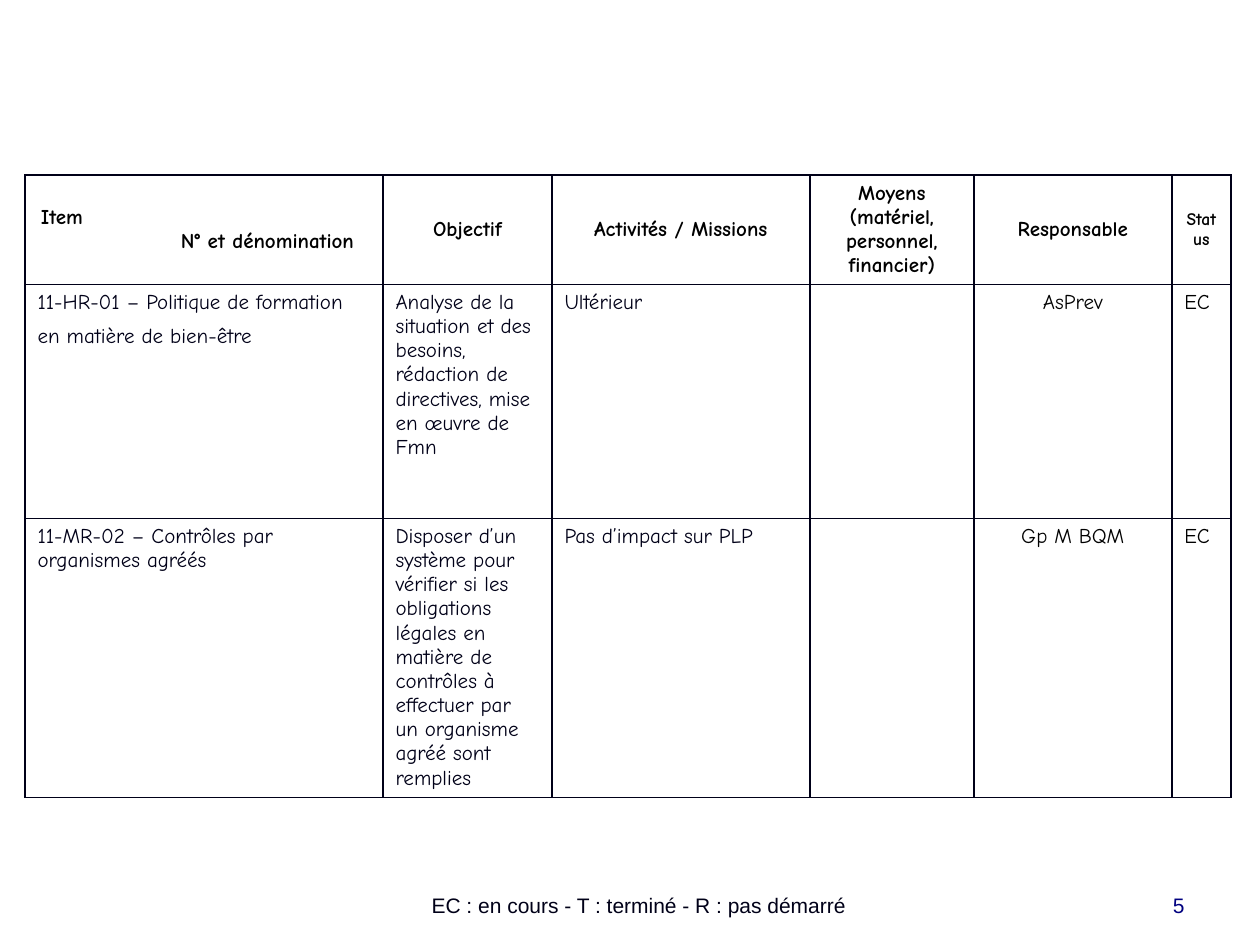
from lxml import etree
from pptx import Presentation
from pptx.dml.color import RGBColor
from pptx.enum.text import MSO_ANCHOR, PP_ALIGN
from pptx.oxml.ns import qn
from pptx.util import Pt

LEFT, CENTER, RIGHT = PP_ALIGN.LEFT, PP_ALIGN.CENTER, PP_ALIGN.RIGHT
TOP, MIDDLE, BOTTOM = MSO_ANCHOR.TOP, MSO_ANCHOR.MIDDLE, MSO_ANCHOR.BOTTOM
INK, BLACK, NAVY, WHITE = "000018", "000000", "000080", "FFFFFF"
BODY_FONT, FOOT_FONT = "Comic Neue", "Arial"

# Content
HEADERS = ["Item\nN° et dénomination", "Objectif", "Activités / Missions",
           "Moyens (matériel, personnel, financier)", "Responsable", "Status"]
ITEMS = [
    ["11-HR-01 – Politique de formation en matière de bien-être",
     "Analyse de la situation et des besoins, rédaction de directives, "
     "mise en œuvre de Fmn",
     "Ultérieur", "", "AsPrev", "EC"],
    ["11-MR-02 – Contrôles par organismes agréés",
     "Disposer d’un système pour vérifier si les obligations légales en "
     "matière de contrôles à effectuer par un organisme agréé sont remplies",
     "Pas d’impact sur PLP", "", "Gp M BQM", "EC"],
]
FOOTERS = [  # text, box in px, alignment, colour
    ("EC : en cours - T : terminé - R : pas démarré",
     (292, 861, 694, 63), CENTER, INK),
    ("5", (903, 861, 294, 63), RIGHT, NAVY),
]

# Layout in px
TABLE_LEFT, TABLE_TOP = 25, 175
COL_WIDTHS = [358, 169, 258, 164, 198, 59]
ROW_HEIGHTS = [109, 234, 279]
OWNER_COL, STATUS_COL = 4, 5


def px(n):
    return n * 914400 // 126


def rgb(value):
    return RGBColor.from_string(value)


def style(tf, size, font, color, align, bold=False):
    for p in tf.paragraphs:
        p.alignment = align
        p.font.size = Pt(size)
        for r in p.runs:
            f = r.font
            f.size, f.name, f.bold = Pt(size), font, bold
            f.color.rgb = rgb(color)


def add_borders(cell):
    tc_pr = cell._tc.get_or_add_tcPr()
    for i, side in enumerate(("lnL", "lnR", "lnT", "lnB")):
        ln = etree.Element(qn("a:" + side), w=str(Pt(1)))
        fill = etree.SubElement(ln, qn("a:solidFill"))
        etree.SubElement(fill, qn("a:srgbClr"), val=INK)
        tc_pr.insert(i, ln)


prs = Presentation()
prs.slide_width, prs.slide_height = px(1260), px(945)
s = prs.slides.add_slide(prs.slide_layouts[6])

# Action table
rows = [HEADERS] + ITEMS
table = s.shapes.add_table(len(rows), len(HEADERS), px(TABLE_LEFT), px(TABLE_TOP),
                           px(sum(COL_WIDTHS)), px(sum(ROW_HEIGHTS))).table
for col, width in zip(table.columns, COL_WIDTHS):
    col.width = px(width)
for row, height in zip(table.rows, ROW_HEIGHTS):
    row.height = px(height)

for i, row in enumerate(rows):
    for j, text in enumerate(row):
        cell = table.cell(i, j)
        header = i == 0
        cell.text_frame.text = text
        cell.vertical_anchor = MIDDLE if header else TOP
        cell.fill.solid()
        cell.fill.fore_color.rgb = rgb(WHITE)
        add_borders(cell)
        style(cell.text_frame,
              10 if header and j == STATUS_COL else 12, BODY_FONT,
              BLACK if header or j >= OWNER_COL else INK,
              CENTER if header or j == OWNER_COL else LEFT, header)

# Two-line item header, second line indented
item = table.cell(0, 0)
item.margin_left = px(16)
for p, indent in zip(item.text_frame.paragraphs, (0, 140)):
    p.alignment = LEFT
    p._p.get_or_add_pPr().set("marL", str(px(indent)))

# A larger closing tab opens up the last line of the first item
r = table.cell(1, 0).text_frame.paragraphs[0].add_run()
r.text = "\t"
r.font.size, r.font.name = Pt(18), FOOT_FONT

# Legend and page number
for text, box, align, color in FOOTERS:
    tf = s.shapes.add_textbox(*map(px, box)).text_frame
    tf.word_wrap = True
    tf.vertical_anchor = BOTTOM
    tf.text = text
    style(tf, 12, FOOT_FONT, color, align)

prs.save("out.pptx")
